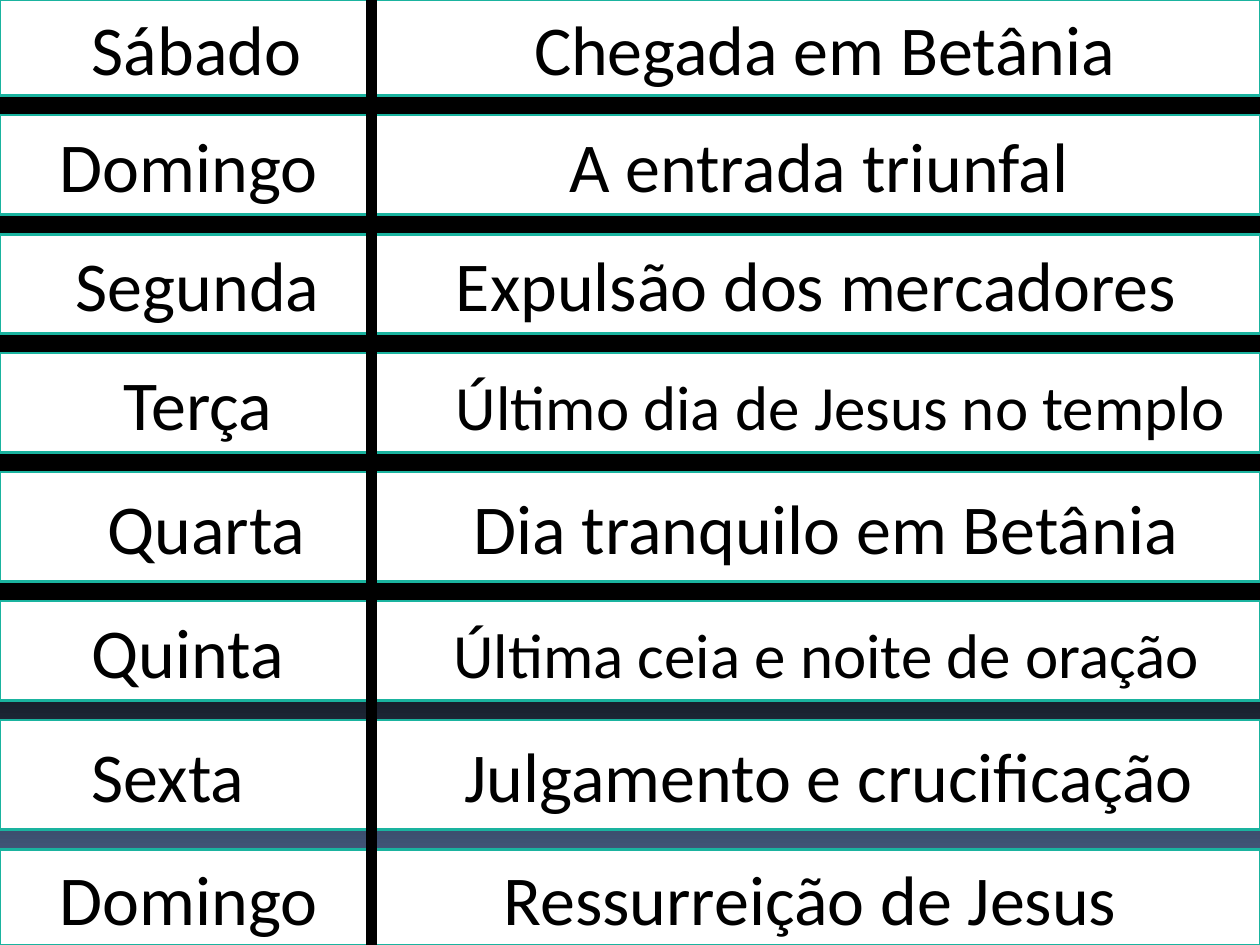
import copy
import pptx
import pptx.dml.color
import pptx.enum.shapes
import pptx.enum.text
import pptx.oxml
import pptx.oxml.ns
import pptx.util

RGB = pptx.dml.color.RGBColor
BLACK = RGB(0x00, 0x00, 0x00)
WHITE = RGB(0xFF, 0xFF, 0xFF)
TEAL = RGB(0x1A, 0xB3, 0x9F)
BLUE = RGB(0x5B, 0x77, 0xA8)
Inch = pptx.util.Inches
Pt = pptx.util.Pt
WIDE, HIGH = 10, 7.5
INSET = 0.1
STEP = 0.126  # day names are indented by whole steps
SPLIT = 0.295 * WIDE

# Day, indent steps, event, event left, event size, row height
ROWS = [
    ("Sábado", 5, "Chegada em Betânia", 4.24, 40, 0.76),
    ("Domingo", 3, "A entrada triunfal", 4.52, 40, 0.79),
    ("Segunda", 4, "Expulsão dos mercadores", 3.62, 40, 0.79),
    ("Terça", 7, "Último dia de Jesus no templo", 3.62, 36, 0.79),
    ("Quarta", 6, "Dia tranquilo em Betânia", 3.76, 40, 0.87),
    ("Quinta", 5, "Última ceia e noite de oração", 3.6, 36, 0.79),
    ("Sexta", 5, "Julgamento e crucificação", 3.69, 40, 0.87),
    ("Domingo", 3, "Ressurreição de Jesus", 4, 40, 0.76),
]
GAP = (HIGH - sum(row[-1] for row in ROWS)) / (len(ROWS) - 1)


def set_tabs(para, stops):
    tabs = pptx.oxml.parse_xml("<a:tabLst %s/>" % pptx.oxml.ns.nsdecls("a"))
    for stop in stops:
        tab = tabs.makeelement(pptx.oxml.ns.qn("a:tab"))
        tab.set("pos", str(int(Inch(stop))))
        tab.set("algn", "l")
        tabs.append(tab)
    para._p.get_or_add_pPr().append(tabs)


deck = pptx.Presentation()
deck.slide_width, deck.slide_height = Inch(WIDE), Inch(HIGH)
slide = deck.slides.add_slide(deck.slide_layouts[6])

# Background: black, fading to blue in the last third
fill = slide.background.fill
fill.gradient()
fill.gradient_angle = 270
first, last = fill.gradient_stops
first.color.rgb, first.position = BLACK, 0
last.color.rgb, last.position = BLUE, 1
start = fill._fill._gradFill.find(pptx.oxml.ns.qn("a:gsLst"))[0]
mid = copy.deepcopy(start)
mid.set("pos", "65000")
start.addnext(mid)

# One bar per day
top = 0
for day, steps, event, left, size, tall in ROWS:
    bar = slide.shapes.add_shape(
        pptx.enum.shapes.MSO_SHAPE.RECTANGLE,
        0, Inch(top), Inch(WIDE), Inch(tall))
    bar.shadow.inherit = False
    bar.fill.solid()
    bar.fill.fore_color.rgb = WHITE
    bar.line.color.rgb = TEAL
    bar.line.width = Pt(1.5)
    frame = bar.text_frame
    frame.word_wrap = True
    frame.vertical_anchor = pptx.enum.text.MSO_ANCHOR.MIDDLE
    para = frame.paragraphs[0]
    para.alignment = pptx.enum.text.PP_ALIGN.LEFT
    set_tabs(para, (steps * STEP, left - INSET))
    for text, points in (("\t" + day, 40), ("\t" + event, size)):
        run = para.add_run()
        run.text = text
        run.font.name = "Calibri"
        run.font.size = Pt(points)
        run.font.color.rgb = BLACK
    top += tall + GAP

# Divider between days and events
rule = slide.shapes.add_connector(
    pptx.enum.shapes.MSO_CONNECTOR.STRAIGHT,
    Inch(SPLIT), 0, Inch(SPLIT), Inch(HIGH))
rule.line.color.rgb = BLACK
rule.line.width = Pt(6)
rule._element.spPr.append(
    pptx.oxml.parse_xml("<a:effectLst %s/>" % pptx.oxml.ns.nsdecls("a")))

deck.save("out.pptx")
